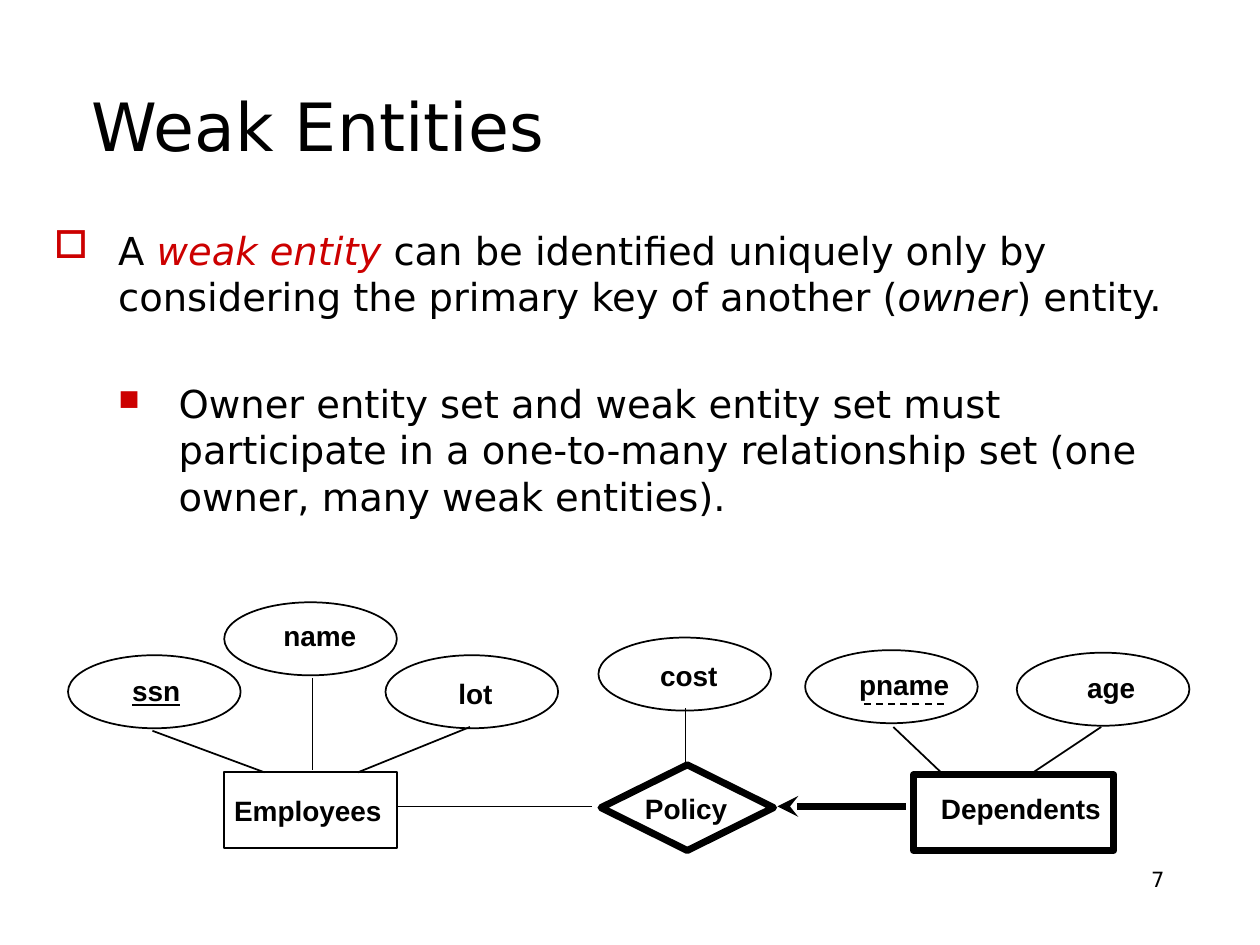
from lxml.etree import SubElement
from pptx import Presentation
from pptx.dml.color import RGBColor
from pptx.enum.dml import MSO_LINE_DASH_STYLE as Dash
from pptx.enum.shapes import MSO_CONNECTOR, MSO_SHAPE as Shape
from pptx.enum.text import MSO_ANCHOR as Anchor, MSO_AUTO_SIZE as AutoSize, PP_ALIGN as Align
from pptx.oxml.ns import qn
from pptx.util import Inches, Pt

BLACK, RED = "000000", "CC0000"
BODY_FONT, LABEL_FONT = "DejaVu Sans", "Arial"
NODE_WIDTH, OVAL_HEIGHT = 1.37, 0.58
LABEL_SLACK = 0.06  # spare width that keeps each label on one line
THIN, THICK = 1, 4

# name, oval left and top, label left, top and width
ATTRIBUTES = [
    ("ssn", 0.54, 5.2, 0.95, 5.3, 0.58),
    ("name", 1.78, 4.78, 2.15, 4.86, 0.78),
    ("lot", 3.06, 5.2, 3.54, 5.32, 0.47),
    ("cost", 4.75, 5.06, 5.14, 5.18, 0.65),
    ("pname", 6.39, 5.16, 6.72, 5.25, 0.91),
    ("age", 8.07, 5.18, 8.53, 5.27, 0.58),
]

# name, shape, its left, top, width, height, line width, label left, top and width
SETS = [
    ("Employees", Shape.RECTANGLE, 1.78, 6.13, NODE_WIDTH, 0.6, THIN, 1.76, 6.25, 1.37),
    ("Policy", Shape.DIAMOND, 4.77, 6.07, NODE_WIDTH, 0.68, THICK, 5.02, 6.23, 0.85),
    ("Dependents", Shape.RECTANGLE, 7.25, 6.15, 1.59, 0.6, THICK, 7.37, 6.23, 1.47),
]

# start x and y, end x and y
LINKS = [
    (1.21, 5.8, 2.1, 6.13),    # ssn to Employees
    (2.48, 5.38, 2.48, 6.11),  # name to Employees
    (3.73, 5.77, 2.84, 6.13),  # lot to Employees
    (5.44, 6.07, 5.44, 5.62),  # Policy to cost
    (7.09, 5.77, 7.49, 6.15),  # pname to Dependents
    (8.74, 5.77, 8.17, 6.15),  # age to Dependents
    (4.7, 6.4, 3.15, 6.4),     # Policy to Employees
]

DEFINITION = [
    ("A ", BLACK, False),
    ("weak entity ", RED, True),
    ("can be identified uniquely only by considering the primary key of another (", BLACK, False),
    ("owner", BLACK, True),
    (") entity.", BLACK, False),
]
CONSTRAINT = [
    ("Owner entity set and weak entity set must participate in a one-to-many "
     "relationship set (one owner, many weak entities).", BLACK, False),
]


def rgb(color):
    return RGBColor.from_string(color)


def set_font(font, name, size, color=BLACK):
    font.name, font.size = name, Pt(size)
    font.color.rgb = rgb(color)


def add_text_frame(slide, left, top, width, height):
    box = slide.shapes.add_textbox(Inches(left), Inches(top), Inches(width), Inches(height))
    box.text_frame.word_wrap = True
    return box.text_frame


def add_line_of_text(slide, text, place, size, align=Align.LEFT, anchor=Anchor.TOP):
    frame = add_text_frame(slide, *place)
    frame.vertical_anchor = anchor
    paragraph = frame.paragraphs[0]
    paragraph.text, paragraph.alignment = text, align
    set_font(paragraph.font, BODY_FONT, size)


def add_bullet(paragraph, char, margin, hanging, percent):
    props = paragraph._p.get_or_add_pPr()
    props.set("marL", str(Inches(margin)))
    props.set("indent", str(-Inches(hanging)))
    color = SubElement(props, qn("a:buClr"))
    SubElement(color, qn("a:srgbClr"), val=RED)
    SubElement(props, qn("a:buSzPct"), val=str(percent * 1000))
    SubElement(props, qn("a:buChar"), char=char)


def add_body_paragraph(paragraph, pieces, char, margin, hanging, percent=100):
    add_bullet(paragraph, char, margin, hanging, percent)
    set_font(paragraph.font, BODY_FONT, 22)
    for text, color, italic in pieces:
        run = paragraph.add_run()
        run.text = text
        run.font.italic = italic
        run.font.color.rgb = rgb(color)


def add_body(slide):
    frame = add_text_frame(slide, 0.33, 1.75, 9.42, 2.67)
    add_body_paragraph(frame.paragraphs[0], DEFINITION, "□", 0.51, 0.51)
    constraint = frame.add_paragraph()
    constraint.level = 1
    constraint.space_before = Pt(35)
    add_body_paragraph(constraint, CONSTRAINT, "■", 0.99, 0.48, percent=75)


def add_outline(slide, kind, left, top, width, height, weight=THIN):
    outline = slide.shapes.add_shape(
        kind, Inches(left), Inches(top), Inches(width), Inches(height))
    outline.shadow.inherit = False
    outline.fill.background()
    outline.line.color.rgb = rgb(BLACK)
    outline.line.width = Pt(weight)


def add_label(slide, text, left, top, width, underline=False):
    frame = add_text_frame(slide, left, top, width + LABEL_SLACK, 0.36)
    frame.word_wrap = False
    frame.auto_size = AutoSize.NONE
    paragraph = frame.paragraphs[0]
    paragraph.text, paragraph.alignment = text, Align.LEFT
    set_font(paragraph.font, LABEL_FONT, 16)
    paragraph.font.bold = True
    if underline:
        paragraph.font.underline = True


def add_link(slide, x1, y1, x2, y2, weight=THIN):
    link = slide.shapes.add_connector(
        MSO_CONNECTOR.STRAIGHT, Inches(x1), Inches(y1), Inches(x2), Inches(y2))
    link.line.color.rgb = rgb(BLACK)
    link.line.width = Pt(weight)
    SubElement(link._element.spPr, qn("a:effectLst"))
    return link.line


def add_diagram(slide):
    for name, left, top, *label_place in ATTRIBUTES:
        add_outline(slide, Shape.OVAL, left, top, NODE_WIDTH, OVAL_HEIGHT)
        add_label(slide, name, *label_place, underline=name == "ssn")
    for name, kind, left, top, width, height, weight, *label_place in SETS:
        add_outline(slide, kind, left, top, width, height, weight)
        add_label(slide, name, *label_place)
    for ends in LINKS:
        add_link(slide, *ends)
    partial_key = add_link(slide, 7.49, 5.59, 6.82, 5.59)
    partial_key.dash_style = Dash.DASH
    participation = add_link(slide, 6.17, 6.4, 7.19, 6.4, THICK)
    SubElement(participation._get_or_add_ln(), qn("a:headEnd"), type="stealth")


def main():
    deck = Presentation()
    deck.slide_width, deck.slide_height = Inches(10), Inches(7.5)
    slide = deck.slides.add_slide(deck.slide_layouts[6])
    add_line_of_text(slide, "Weak Entities", (0.63, 0.33, 8.75, 1.33), 38, anchor=Anchor.MIDDLE)
    add_body(slide)
    add_diagram(slide)
    add_line_of_text(slide, "7", (7.17, 6.83, 2.17, 0.52), 12, align=Align.RIGHT)
    deck.save("out.pptx")


if __name__ == "__main__":
    main()
